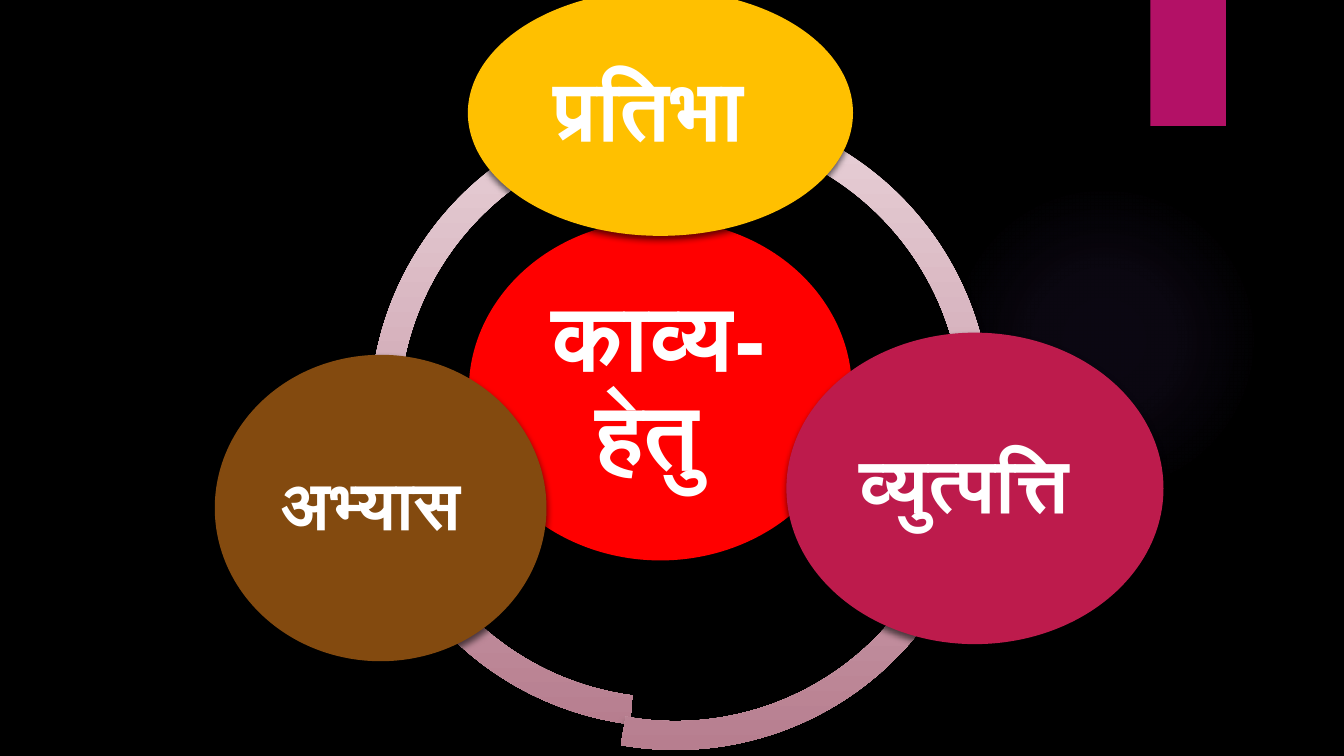
"""Build the slide that sets three sources of poetry around a central circle."""
from dataclasses import dataclass

from lxml import etree
from pptx import Presentation
from pptx.dml.color import RGBColor
from pptx.enum import shapes, text
from pptx.oxml import ns
from pptx.util import Inches, Pt

FONT = "League Spartan"
RING_SIZE = 6.16
RING_THICKNESS = 0.0464
RING_STOPS = [(0, "E9D2D9", 100), (100, "B77E8F", 100)]
GLOW_STOPS = [(0, "9B6BF2", 7), (36, "9B6BF2", 6), (69, "9B6BF2", 0)]


@dataclass
class Arc:
    left: float
    top: float
    start: float
    end: float


@dataclass
class Circle:
    label: str
    left: float
    top: float
    width: float
    height: float
    color: str
    size: int
    inset: float


@dataclass
class Shadow:
    alpha: int
    blur: float
    distance: float


RING = [
    Arc(3.56, 1.05, 97.38, 160.99),
    Arc(3.62, 1.28, 5.6, 100.14),
    Arc(3.67, 1.04, 159.69, 8.38),
]
CIRCLES = [
    Circle("काव्य-हेतु ", 4.65, 2.18, 3.8, 3.38, "FF0000", 66, 0.09),
    Circle("प्रतिभा ", 4.64, -0.1, 3.82, 2.44, "FFC000", 60, 0.08),
    Circle("व्युत्पत्ति ", 7.8, 3.3, 3.74, 3.09, "BD1B4C", 54, 0.07),
    Circle("अभ्यास ", 2.13, 3.52, 3.29, 3.04, "834A0F", 48, 0.07),
]
DIAGRAM_SHADOW = Shadow(60, 5, 3)
TAB_SHADOW = Shadow(45, 3, 2)


def rgb(color: str) -> RGBColor:
    return RGBColor.from_string(color)


def add_child(parent, tag: str, **attributes):
    values = {name: str(value) for name, value in attributes.items()}
    return etree.SubElement(parent, ns.qn(tag), values)


def add_color(parent, color: str, alpha: int) -> None:
    tint = add_child(parent, "a:srgbClr", val=color)
    if alpha < 100:
        add_child(tint, "a:alpha", val=alpha * 1000)


def add_plain(slide, kind, left: float, top: float, width: float, height: float):
    shape = slide.shapes.add_shape(
        kind, Inches(left), Inches(top), Inches(width), Inches(height))
    shape.line.fill.background()
    shape.shadow.inherit = False
    return shape


def fill_solid(shape, color: str) -> None:
    shape.fill.solid()
    shape.fill.fore_color.rgb = rgb(color)


def fill_gradient(shape, stops: list[tuple[int, str, int]], radial: bool = False) -> None:
    shape.fill.gradient()
    gradient = shape._element.spPr.find(ns.qn("a:gradFill"))
    for child in list(gradient):
        gradient.remove(child)
    stop_list = add_child(gradient, "a:gsLst")
    for position, color, alpha in stops:
        add_color(add_child(stop_list, "a:gs", pos=position * 1000), color, alpha)
    if radial:
        path = add_child(gradient, "a:path", path="circle")
        add_child(path, "a:fillToRect", l=50000, t=50000, r=50000, b=50000)
    else:
        add_child(gradient, "a:lin", ang=90 * 60000, scaled=0)


def cast_shadow(shape, shadow: Shadow) -> None:
    effects = shape._element.spPr.find(ns.qn("a:effectLst"))
    outer = add_child(effects, "a:outerShdw", blurRad=Pt(shadow.blur),
                      dist=Pt(shadow.distance), dir=90 * 60000, rotWithShape=0)
    add_color(outer, "000000", shadow.alpha)


def draw_arc(slide, arc: Arc) -> None:
    band = add_plain(slide, shapes.MSO_SHAPE.BLOCK_ARC, arc.left, arc.top,
                     RING_SIZE, RING_SIZE)
    band.adjustments[0] = arc.start * 0.6
    band.adjustments[1] = arc.end * 0.6
    band.adjustments[2] = RING_THICKNESS
    fill_gradient(band, RING_STOPS)
    cast_shadow(band, DIAGRAM_SHADOW)


def draw_circle(slide, circle: Circle) -> None:
    disc = add_plain(slide, shapes.MSO_SHAPE.OVAL, circle.left, circle.top,
                     circle.width, circle.height)
    fill_solid(disc, circle.color)
    cast_shadow(disc, DIAGRAM_SHADOW)
    frame = disc.text_frame
    frame.text = circle.label
    frame.word_wrap = True
    frame.vertical_anchor = text.MSO_ANCHOR.MIDDLE
    frame.margin_left = frame.margin_right = Inches(circle.inset)
    frame.margin_top = frame.margin_bottom = Inches(circle.inset)
    label = frame.paragraphs[0]
    label.alignment = text.PP_ALIGN.CENTER
    label.line_spacing = 0.9
    font = label.runs[0].font
    font.name = FONT
    font.size = Pt(circle.size)
    font.bold = True
    font.color.rgb = rgb("FFFFFF")


def main() -> None:
    deck = Presentation()
    deck.slide_width, deck.slide_height = Inches(13.33), Inches(7.5)
    slide = deck.slides.add_slide(deck.slide_layouts[6])
    slide.background.fill.solid()
    slide.background.fill.fore_color.rgb = rgb("000000")

    glow = add_plain(slide, shapes.MSO_SHAPE.OVAL, 9.41, 1.83, 3.08, 3.08)
    fill_gradient(glow, GLOW_STOPS, radial=True)
    corner_tab = add_plain(slide, shapes.MSO_SHAPE.RECTANGLE, 11.41, 0, 0.75, 1.25)
    fill_solid(corner_tab, "B31166")
    cast_shadow(corner_tab, TAB_SHADOW)

    for arc in RING:
        draw_arc(slide, arc)
    for circle in CIRCLES:
        draw_circle(slide, circle)
    deck.save("out.pptx")


if __name__ == "__main__":
    main()
